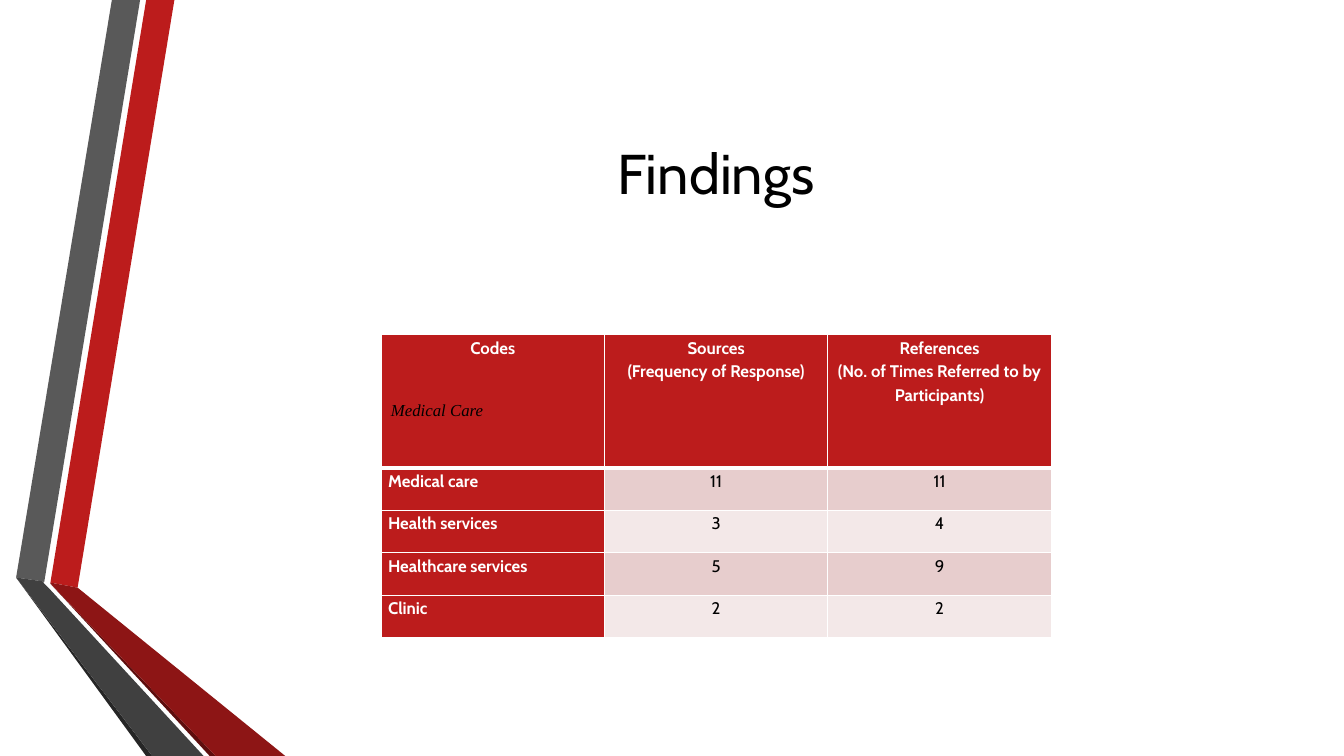
from dataclasses import dataclass

from lxml.etree import SubElement
from pptx import Presentation
from pptx.dml.color import RGBColor
from pptx.enum.text import MSO_ANCHOR as Anchor, PP_ALIGN as Align
from pptx.oxml.ns import qn
from pptx.util import Inches, Pt


@dataclass(frozen=True)
class Theme:
    red: str = "BC1C1C"
    deep_red: str = "8D1515"
    red_edge: str = "5E0E0E"
    grey: str = "595959"
    deep_grey: str = "404040"
    grey_edge: str = "262626"
    band_dark: str = "E7CDCD"
    band_light: str = "F3E8E8"
    white: str = "FFFFFF"
    black: str = "000000"
    font: str = "Cabin"
    label_font: str = "Times New Roman"
    title_size: int = 40
    body_size: int = 12
    thin: int = 1
    thick: int = 3


@dataclass(frozen=True)
class Ribbon:
    color: str
    points: tuple[tuple[float, float], ...]


@dataclass(frozen=True)
class Finding:
    code: str
    sources: int
    references: int


THEME = Theme()

# Page grid: 40 columns by 30 rows
WIDTH, HEIGHT = Inches(13.33), Inches(7.5)
COLUMNS, ROWS = 40, 30

RIBBONS = [
    Ribbon(THEME.red, ((1.5, 23.12), (2.31, 23.32), (5.19, 0), (4.35, 0))),
    Ribbon(THEME.grey, ((4.17, 0), (3.33, 0), (0.48, 22.92), (1.32, 23.08))),
    Ribbon(THEME.grey_edge, ((0.48, 22.92), (4.35, 30), (4.53, 30))),
    Ribbon(THEME.red_edge, ((1.5, 23.16), (6.24, 30), (6.42, 30))),
    Ribbon(THEME.deep_red, ((1.5, 23.12), (1.5, 23.16), (6.42, 30), (8.49, 30), (2.31, 23.32))),
    Ribbon(THEME.deep_grey, ((6.06, 30), (1.44, 23.32), (1.29, 23.12), (1.32, 23.08),
                             (0.48, 22.92), (4.53, 30))),
]

HEADINGS = [
    "Codes",
    "Sources\n(Frequency of Response)",
    "References\n(No. of Times Referred to by Participants)",
]
FINDINGS = [
    Finding("Medical care", 11, 11),
    Finding("Health services", 3, 4),
    Finding("Healthcare services", 5, 9),
    Finding("Clinic", 2, 2),
]

TABLE_LEFT, TABLE_TOP = 11.34, 13.28
TABLE_COLUMN, HEADER_ROW, BODY_ROW = 6.65, 5.28, 1.69


def across(columns: float) -> int:
    return round(WIDTH * columns / COLUMNS)


def down(rows: float) -> int:
    return round(HEIGHT * rows / ROWS)


def write(frame, text: str, *, size: int = THEME.body_size, font: str = THEME.font,
          color: str = THEME.black, bold: bool = False, italic: bool = False,
          align=Align.LEFT, spacing: float = 1.0) -> None:
    for index, line in enumerate(text.split("\n")):
        para = frame.add_paragraph() if index else frame.paragraphs[0]
        para.alignment, para.line_spacing = align, spacing
        span = para.add_run()
        span.text = line
        span.font.name, span.font.size = font, Pt(size)
        span.font.bold, span.font.italic = bold, italic
        span.font.color.rgb = RGBColor.from_string(color)


def add_text(page, text: str, left: float, top: float, width: float, height: float,
             **style) -> None:
    box = page.shapes.add_textbox(across(left), down(top), across(width), down(height))
    box.text_frame.word_wrap = True
    box.text_frame.vertical_anchor = Anchor.MIDDLE
    write(box.text_frame, text, **style)


def add_ribbon(page, ribbon: Ribbon) -> None:
    start, *others = [(across(x), down(y)) for x, y in ribbon.points]
    builder = page.shapes.build_freeform(*start)
    builder.add_line_segments(others, close=True)
    shape = builder.convert_to_shape()
    shape.shadow.inherit = False
    shape.fill.solid()
    shape.fill.fore_color.rgb = RGBColor.from_string(ribbon.color)
    shape.line.fill.background()


def style_cell(cell, fill: str, top: int, bottom: int) -> None:
    cell.margin_left = cell.margin_right = Inches(0.07)
    cell.margin_top = cell.margin_bottom = 0
    # Borders come before the fill in the cell's properties
    properties = cell._tc.get_or_add_tcPr()
    sides = {"lnL": THEME.thin, "lnR": THEME.thin, "lnT": top, "lnB": bottom}
    for side, weight in sides.items():
        line = SubElement(properties, qn(f"a:{side}"), w=str(Pt(weight)))
        SubElement(SubElement(line, qn("a:solidFill")), qn("a:srgbClr"), val=THEME.white)
    cell.fill.solid()
    cell.fill.fore_color.rgb = RGBColor.from_string(fill)


def add_findings(page) -> None:
    content = [HEADINGS] + [[item.code, str(item.sources), str(item.references)]
                            for item in FINDINGS]
    heights = [HEADER_ROW] + [BODY_ROW] * len(FINDINGS)
    table = page.shapes.add_table(
        len(content), len(HEADINGS), across(TABLE_LEFT), down(TABLE_TOP),
        across(TABLE_COLUMN * len(HEADINGS)), down(sum(heights))).table
    for column in table.columns:
        column.width = across(TABLE_COLUMN)
    for r, (texts, height) in enumerate(zip(content, heights)):
        table.rows[r].height = down(height)
        band = THEME.band_dark if r % 2 else THEME.band_light
        for c, text in enumerate(texts):
            heading = r == 0 or c == 0
            cell = table.cell(r, c)
            style_cell(cell, THEME.red if heading else band,
                       top=THEME.thick if r == 1 else THEME.thin,
                       bottom=THEME.thick if r == 0 else THEME.thin)
            write(cell.text_frame, text, bold=heading, spacing=1.15,
                  color=THEME.white if heading else THEME.black,
                  align=Align.LEFT if r and c == 0 else Align.CENTER)


def main() -> None:
    deck = Presentation()
    deck.slide_width, deck.slide_height = WIDTH, HEIGHT
    page = deck.slides.add_slide(deck.slide_layouts[6])

    # Folded ribbons on the left
    for ribbon in RIBBONS:
        add_ribbon(page, ribbon)

    # Title, table and the label over its header
    add_text(page, "Findings", 4.86, 3, 32.88, 7.68,
             size=THEME.title_size, align=Align.CENTER)
    add_findings(page)
    add_text(page, "Medical Care", TABLE_LEFT, 15.28, TABLE_COLUMN, 2,
             font=THEME.label_font, italic=True)

    deck.save("out.pptx")


if __name__ == "__main__":
    main()
